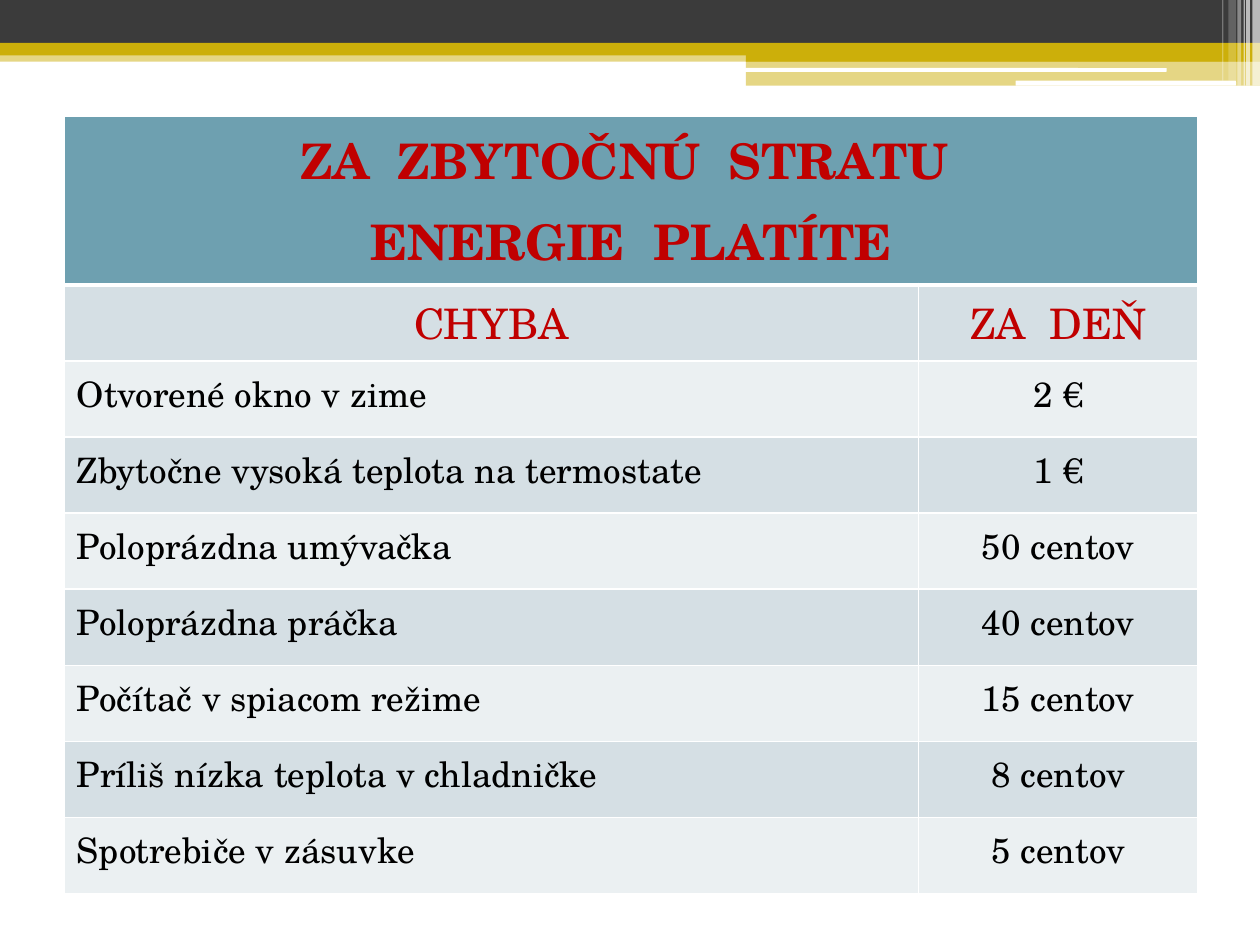
"""Build a slide with a table of what wasted energy costs per day."""
import pptx
import pptx.util
import pptx.dml.color
import pptx.enum.shapes
import pptx.enum.text
import pptx.oxml
import pptx.oxml.ns
from dataclasses import dataclass
from lxml import etree

Inches = pptx.util.Inches


@dataclass(frozen=True)
class Theme:
    font: str = "TeX Gyre Schola"
    dark: str = "3B3B3B"
    gold: str = "CCAF0A"
    white: str = "FFFFFF"
    red: str = "C00000"
    black: str = "000000"
    teal: str = "6EA0B0"
    bands: tuple = ("D5DFE4", "EBF0F2")
    title: int = 28
    head: int = 24
    body: int = 20


theme = Theme()
qn = pptx.oxml.ns.qn
center = pptx.enum.text.PP_ALIGN.CENTER
left = pptx.enum.text.PP_ALIGN.LEFT
kinds = pptx.enum.shapes.MSO_SHAPE


def paint(fill, color, alpha=100):
    fill.solid()
    fill.fore_color.rgb = pptx.dml.color.RGBColor.from_string(color)
    if alpha < 100:
        tint = fill._xPr.find(qn("a:solidFill"))[0]
        etree.SubElement(tint, qn("a:alpha"), val=str(alpha * 1000))


def style(cell, lines, size, color, shade, align=center, bold=False, top=1, bottom=1):
    cell.text = "\n".join(lines)
    for para in cell.text_frame.paragraphs:
        para.alignment = align
        para.font.name = theme.font
        para.font.size = pptx.util.Pt(size)
        para.font.bold = bold
        para.font.color.rgb = pptx.dml.color.RGBColor.from_string(color)
    props = cell._tc.get_or_add_tcPr()
    for side, width in (("L", 1), ("R", 1), ("T", top), ("B", bottom)):
        edge = etree.SubElement(props, qn(f"a:ln{side}"), w=str(pptx.util.Pt(width)))
        solid = etree.SubElement(edge, qn("a:solidFill"))
        etree.SubElement(solid, qn("a:srgbClr"), val=theme.white)
    paint(cell.fill, shade)


deck = pptx.Presentation()
deck.slide_width, deck.slide_height = Inches(10), Inches(7.5)
slide = deck.slides.add_slide(deck.slide_layouts[6])

bars = [
    (0, 0.4, 10, 0.09, theme.gold, 50),
    (0, 0, 10, 0.34, theme.dark, 100),
    (0, 0.34, 10, 0.1, theme.gold, 100),
    (5.92, 0.39, 4.08, 0.1, theme.gold, 100),
    (5.92, 0.48, 4.08, 0.2, theme.gold, 50),
]
pills = [
    (5.91, 0.54, 3.35, 0.03, theme.white, 100),
    (8.06, 0.64, 1.75, 0.04, theme.white, 100),
]
stripes = [
    (x, 0, wide, tall, theme.white, alpha)
    for x, wide, tall, alpha in (
        (9.94, 0.06, 0.68, 65),
        (9.89, 0.03, 0.68, 65),
        (9.87, 0.01, 0.68, 60),
        (9.82, 0.03, 0.68, 40),
        (9.75, 0.06, 0.64, 20),
        (9.7, 0.01, 0.64, 30),
    )
]
for kind, group in (
    (kinds.RECTANGLE, bars),
    (kinds.ROUNDED_RECTANGLE, pills),
    (kinds.RECTANGLE, stripes),
):
    for *box, color, alpha in group:
        shape = slide.shapes.add_shape(kind, *map(Inches, box))
        shape.shadow.inherit = False
        shape.line.fill.background()
        paint(shape.fill, color, alpha)

costs = [
    ("CHYBA", "ZA  DEŇ"),
    ("Otvorené okno v zime", "2 €"),
    ("Zbytočne vysoká teplota na termostate", "1 €"),
    ("Poloprázdna umývačka", "50 centov"),
    ("Poloprázdna práčka", "40 centov"),
    ("Počítač v spiacom režime", "15 centov"),
    ("Príliš nízka teplota v chladničke", "8 centov"),
    ("Spotrebiče v zásuvke", "5 centov"),
]
total, first = 6.11, 1.28
frame = slide.shapes.add_table(
    len(costs) + 1, 2, Inches(0.51), Inches(0.92), Inches(9), Inches(total)
)
table = frame.table
table.columns[0].width, table.columns[1].width = Inches(6.78), Inches(2.22)
for row in table.rows:
    row.height = Inches((total - first) / len(costs))
table.rows[0].height = Inches(first)

banner = table.cell(0, 0)
banner.merge(table.cell(0, 1))
lines = ["ZA  ZBYTOČNÚ  STRATU ", "ENERGIE  PLATÍTE"]
style(banner, lines, theme.title, theme.red, theme.teal, bold=True, bottom=3)
banner.text_frame.paragraphs[1].space_before = pptx.util.Pt(3)

for row, pair in enumerate(costs, 1):
    head = row == 1
    for col, text in enumerate(pair):
        style(
            table.cell(row, col),
            [text],
            theme.head if head else theme.body,
            theme.red if head else theme.black,
            theme.bands[(row - 1) % 2],
            align=center if head or col else left,
            top=3 if head else 1,
        )

deck.save("out.pptx")
